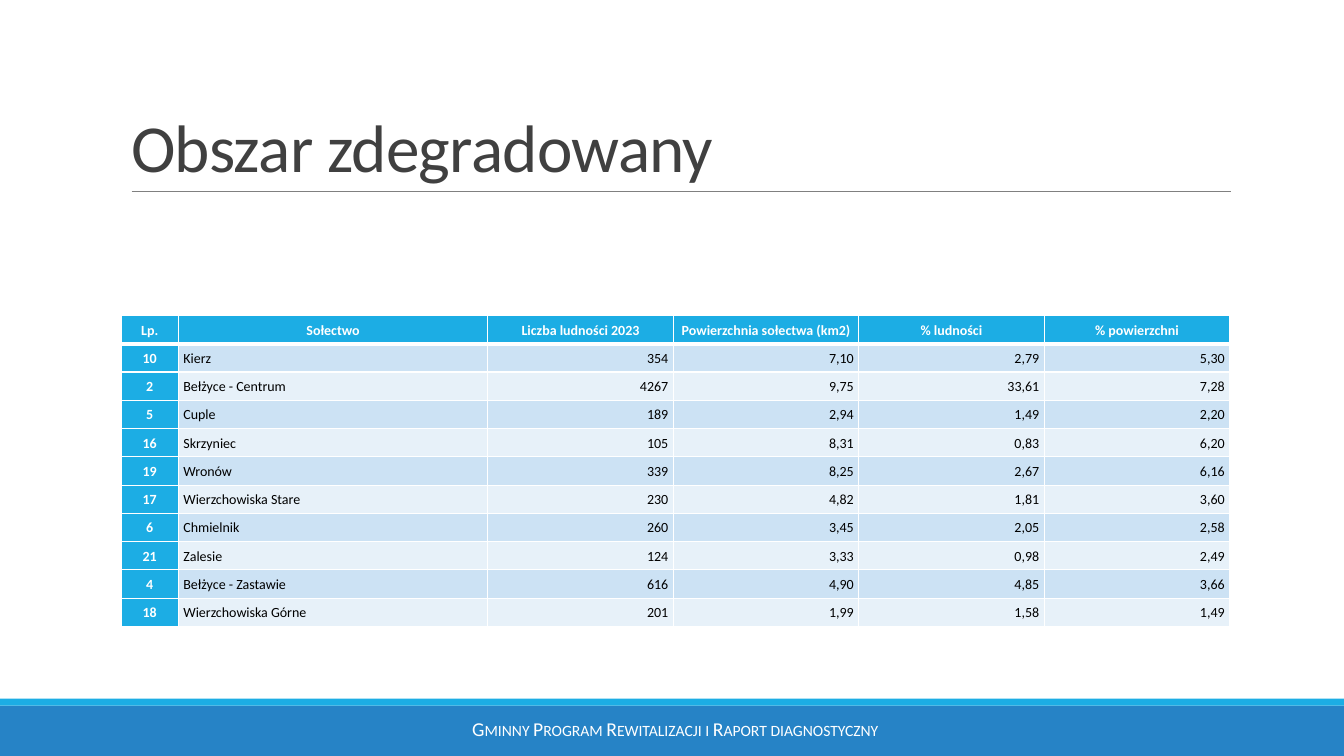
from lxml.etree import SubElement
from pptx import Presentation
from pptx.dml.color import RGBColor
from pptx.enum.shapes import MSO_CONNECTOR as CONN, MSO_SHAPE as SHAPE
from pptx.enum.text import MSO_ANCHOR as ANCHOR, MSO_AUTO_SIZE as AUTO, PP_ALIGN as ALIGN
from pptx.oxml import parse_xml
from pptx.oxml.ns import nsdecls, qn
from pptx.util import Pt

ACCENT, BAND = "1CADE4", "2683C6"
WHITE, BLACK, TITLE, RULE = "FFFFFF", "000000", "404040", "808080"
STRIPES = ("CCE2F4", "E7F1F9")
ROW_HEIGHT = 20.2
COLUMNS = [41, 221] + [132.5] * 4
ALIGNS = [ALIGN.CENTER, ALIGN.LEFT] + [ALIGN.RIGHT] * 4

HEADER = ["Lp.", "Sołectwo", "Liczba ludności 2023", "Powierzchnia sołectwa (km2)",
          "% ludności", "% powierzchni"]
VILLAGES = [
    ["10", "Kierz", "354", "7,10", "2,79", "5,30"],
    ["2", "Bełżyce - Centrum", "4267", "9,75", "33,61", "7,28"],
    ["5", "Cuple", "189", "2,94", "1,49", "2,20"],
    ["16", "Skrzyniec", "105", "8,31", "0,83", "6,20"],
    ["19", "Wronów", "339", "8,25", "2,67", "6,16"],
    ["17", "Wierzchowiska Stare", "230", "4,82", "1,81", "3,60"],
    ["6", "Chmielnik", "260", "3,45", "2,05", "2,58"],
    ["21", "Zalesie", "124", "3,33", "0,98", "2,49"],
    ["4", "Bełżyce - Zastawie", "616", "4,90", "4,85", "3,66"],
    ["18", "Wierzchowiska Górne", "201", "1,99", "1,58", "1,49"],
]


def rgb(value):
    return RGBColor.from_string(value)


class Deck:
    def __init__(self, font):
        self.font = font
        self.prs = Presentation()
        self.prs.slide_width, self.prs.slide_height = Pt(960), Pt(540)
        self.s = self.prs.slides.add_slide(self.prs.slide_layouts[5])

    def text(self, tf, text, size, color, align, bold=False, spacing=1.0, **extra):
        tf.text = text
        p = tf.paragraphs[0]
        p.alignment, p.line_spacing = align, spacing
        p.font.name, p.font.size, p.font.bold = self.font, Pt(size), bold
        p.font.color.rgb = rgb(color)
        for name, value in extra.items():
            p._p.pPr.find(qn("a:defRPr")).set(name, value)

    def title(self, text, x, y, w, h):
        sp = self.s.shapes.title
        sp.left, sp.top, sp.width, sp.height = Pt(x), Pt(y), Pt(w), Pt(h)
        tf = sp.text_frame
        tf.auto_size, tf.vertical_anchor = AUTO.NONE, ANCHOR.BOTTOM
        self.text(tf, text, 48, TITLE, ALIGN.LEFT, spacing=0.85, spc="-50")

    def bar(self, x, y, w, h, color):
        sp = self.s.shapes.add_shape(SHAPE.RECTANGLE, Pt(x), Pt(y), Pt(w), Pt(h))
        sp.shadow.inherit = False
        sp.fill.solid()
        sp.fill.fore_color.rgb = rgb(color)
        sp.line.fill.background()

    def line(self, x1, y1, x2, y2, color, width):
        cn = self.s.shapes.add_connector(CONN.STRAIGHT, Pt(x1), Pt(y1), Pt(x2), Pt(y2))
        cn.line.color.rgb, cn.line.width = rgb(color), Pt(width)
        SubElement(cn._element.spPr, qn("a:effectLst"))

    def label(self, text, x, y, w, h, size, color):
        tf = self.s.shapes.add_textbox(Pt(x), Pt(y), Pt(w), Pt(h)).text_frame
        tf.word_wrap = True
        self.text(tf, text, size, color, ALIGN.CENTER, cap="small")

    def borders(self, cell, **widths):
        tcPr = cell._tc.get_or_add_tcPr()
        for i, side in enumerate("LRTB"):
            width = Pt(widths.get(side, 0.96))
            tcPr.insert(i, parse_xml(
                f'<a:ln{side} {nsdecls("a")} w="{width}"><a:solidFill>'
                f'<a:srgbClr val="{WHITE}"/></a:solidFill></a:ln{side}>'))

    def table(self, rows, x, y):
        frame = self.s.shapes.add_table(len(rows), len(COLUMNS), Pt(x), Pt(y),
                                        Pt(sum(COLUMNS)), Pt(ROW_HEIGHT * len(rows)))
        table = frame.table
        table.first_col, table.horz_banding = True, False
        for column, width in zip(table.columns, COLUMNS):
            column.width = Pt(width)
        for i, row in enumerate(rows):
            table.rows[i].height = Pt(ROW_HEIGHT)
            for j, text in enumerate(row):
                cell = table.cell(i, j)
                heading = i == 0 or j == 0
                cell.margin_left = cell.margin_right = Pt(3.6)
                cell.margin_top = cell.margin_bottom = Pt(3.6)
                cell.vertical_anchor = ANCHOR.MIDDLE
                cell.fill.solid()
                cell.fill.fore_color.rgb = rgb(ACCENT if heading else STRIPES[(i - 1) % 2])
                self.borders(cell, **{0: {"B": 3}, 1: {"T": 3}}.get(i, {}))
                self.text(cell.text_frame, text, 10, WHITE if heading else BLACK,
                          ALIGN.CENTER if i == 0 else ALIGNS[j], heading, 1.07)


def main():
    deck = Deck("Calibri")
    deck.bar(0, 504, 960, 36, BAND)
    deck.bar(0, 499, 960, 5, ACCENT)
    deck.line(94, 136.8, 879, 136.8, RULE, 0.5)
    deck.label("Gminny Program Rewitalizacji i Raport diagnostyczny",
               237.6, 508.3, 489.6, 24, 14, WHITE)
    deck.title("Obszar zdegradowany", 86.4, 22.3, 792, 114.5)
    deck.table([HEADER] + VILLAGES, 86.4, 225.4)
    deck.prs.save("out.pptx")


if __name__ == "__main__":
    main()
